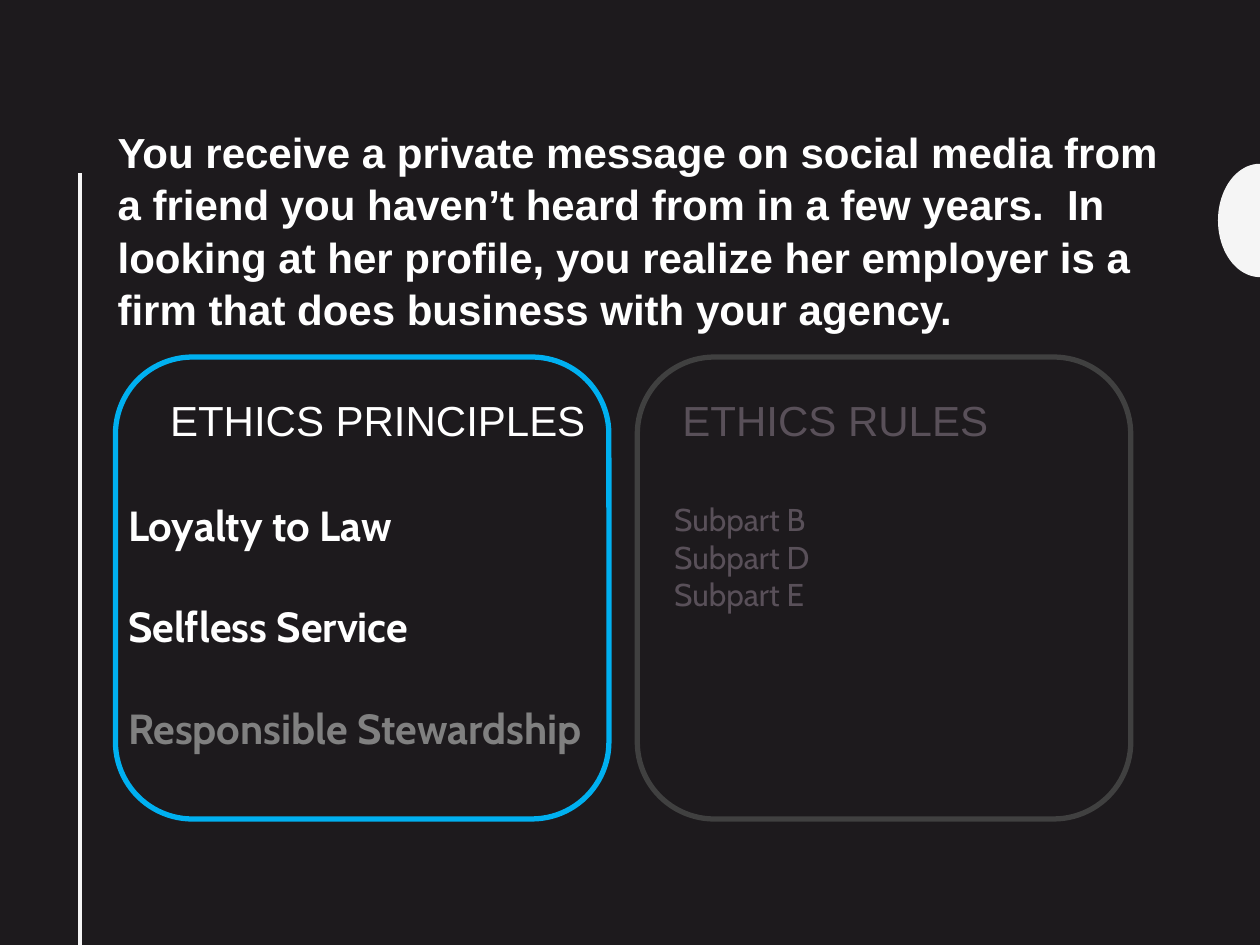
from math import cos, pi, sin
from lxml.etree import SubElement
from pptx import Presentation
from pptx.dml.color import RGBColor
from pptx.enum.shapes import MSO_CONNECTOR, MSO_SHAPE
from pptx.enum.text import MSO_ANCHOR, MSO_AUTO_SIZE, PP_ALIGN
from pptx.oxml.ns import qn
from pptx.util import Inches, Pt

HUES = {
    "back": "1D1A1D", "pale": "F5F5F5", "white": "FFFFFF", "blue": "00B0F0",
    "edge": "404040", "dim": "595059", "gray": "808080",
}
UNIT = Inches(1) / 12
COLS, ROWS = 120, 90


def grid(*cells):
    """Turn grid columns and rows into lengths."""
    return [round(cell * UNIT) for cell in cells]


def tint(name):
    """Look up a named colour."""
    return RGBColor.from_string(HUES[name])


def write(hold, box, lines, hues, size, face, bold=False, gap=0, space=1.0):
    """Place a placeholder in its box and fill it with plain lines."""
    hold.left, hold.top, hold.width, hold.height = grid(*box)
    frame = hold.text_frame
    frame.text = "\n".join(lines)
    frame.word_wrap = True
    frame.auto_size = MSO_AUTO_SIZE.NONE
    frame.margin_right = 0
    for para, hue in zip(frame.paragraphs, hues):
        para.alignment = PP_ALIGN.LEFT
        para.line_spacing = space
        para.space_before, para.space_after = Pt(0), Pt(gap)
        props = para._p.get_or_add_pPr()
        props.set("marL", "0")
        props.set("indent", "0")
        SubElement(props, qn("a:buNone"))
        font = para.runs[0].font
        font.name, font.size, font.bold = face, Pt(size), bold
        font.color.rgb = tint(hue)
    return frame


def decor(slide):
    """Draw the side rule and the half disc at the right edge."""
    rule = slide.shapes.add_connector(
        MSO_CONNECTOR.STRAIGHT, *grid(7.6, 16.5, 7.6, ROWS))
    rule.line.color.rgb = tint("pale")
    rule.line.width = Pt(2)
    SubElement(rule._element.spPr, qn("a:effectLst"))
    steps = 40
    turns = [pi * step / steps for step in range(steps + 1)]
    dots = [grid(COLS - 4 * sin(turn), 21 - 5.4 * cos(turn)) for turn in turns]
    pen = slide.shapes.build_freeform(*dots[0])
    pen.add_line_segments(dots[1:], close=True)
    disc = pen.convert_to_shape()
    disc.shadow.inherit = False
    disc.fill.solid()
    disc.fill.fore_color.rgb = tint("pale")
    disc.line.fill.background()


def title(slide, box):
    """Set the scenario text in the title."""
    text = ("You receive a private message on social media from a friend you "
            "haven’t heard from in a few years.  In looking at her profile, you "
            "realize her employer is a firm that does business with your agency.")
    frame = write(slide.shapes.title, box, [text], ["white"], 24, "Arial",
                  bold=True, space=1.04)
    frame.vertical_anchor = MSO_ANCHOR.MIDDLE


def panel(slide, box, edge, head, hue, shift):
    """Draw a rounded frame with its heading and return the list's box."""
    left, top, wide, high = box
    card = slide.shapes.add_shape(MSO_SHAPE.ROUNDED_RECTANGLE, *grid(*box))
    card.shadow.inherit = False
    card.fill.background()
    card.line.color.rgb = tint(edge)
    card.line.width = Pt(3)
    spot = (left + shift, top + 3, wide - shift, 6)
    frame = write(head[0], spot, [head[1]], [hue], 24, "Arial")
    frame.vertical_anchor = MSO_ANCHOR.MIDDLE
    return left, top + 13, wide, high - 18


def main():
    """Build the slide and save it."""
    deck = Presentation()
    deck.slide_width, deck.slide_height = grid(COLS, ROWS)
    slide = deck.slides.add_slide(deck.slide_layouts[4])
    slide.background.fill.solid()
    slide.background.fill.fore_color.rgb = tint("back")
    holds = slide.placeholders
    decor(slide)
    title(slide, (10, 11, 102, 21.7))

    area = panel(slide, (11, 34, 47, 44), "blue",
                 (holds[1], "ETHICS PRINCIPLES"), "white", 4)
    write(holds[2], area,
          ["Loyalty to Law", "Selfless Service", "Responsible Stewardship"],
          ["white", "white", "gray"], 24, "Cabin", bold=True, gap=29)

    left, top, wide, high = panel(slide, (60.7, 34, 47, 44), "edge",
                                  (holds[3], "ETHICS RULES"), "dim", 3.1)
    write(holds[4], (left + 2.3, top, wide - 2.3, high),
          ["Subpart B", "Subpart D", "Subpart E"], ["dim"] * 3, 18, "Cabin")
    deck.save("out.pptx")


if __name__ == "__main__":
    main()
